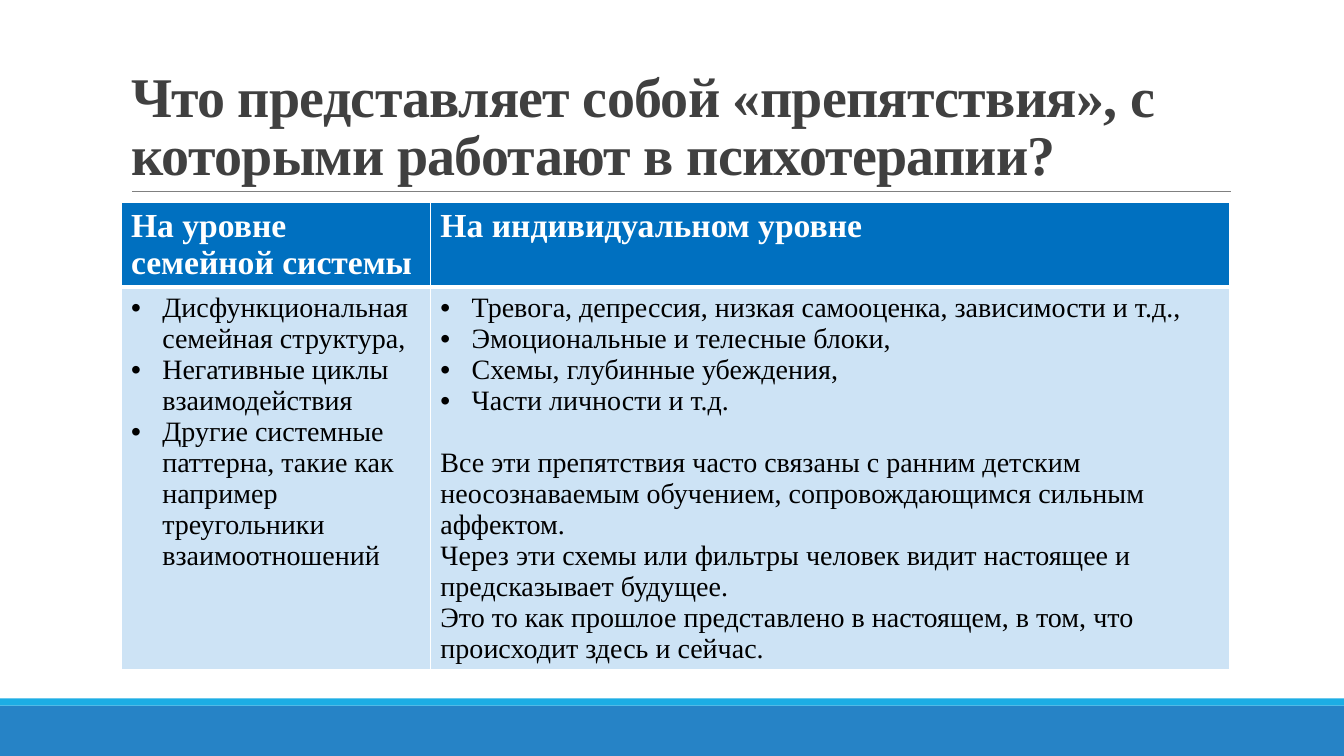
import dataclasses

import lxml.etree
import pptx
import pptx.dml.color
import pptx.enum.shapes
import pptx.enum.text
import pptx.oxml.ns
import pptx.util

SLIDE_WIDTH = pptx.util.Inches(13.33)
SLIDE_HEIGHT = pptx.util.Inches(7.5)
GRID_COLUMNS = 40
GRID_ROWS = 30


@dataclasses.dataclass(frozen=True)
class Theme:
    font: str = "Times New Roman"
    title_color: str = "404040"
    rule_color: str = "808080"
    band_color: str = "2683C6"
    stripe_color: str = "1CADE4"
    header_fill: str = "0070C0"
    body_fill: str = "CDE3F5"
    header_text: str = "FFFFFF"
    body_text: str = "000000"
    border: str = "FFFFFF"
    title_size: int = 40
    header_size: int = 24
    body_size: int = 20
    paragraph_gap: int = 22


THEME = Theme()

TITLE = "Что представляет собой «препятствия», с которыми работают в психотерапии?"
HEADERS = ["На уровне семейной системы", "На индивидуальном уровне"]
FAMILY_BULLETS = [
    "Дисфункциональная семейная структура,",
    "Негативные циклы взаимодействия",
    "Другие системные паттерна, такие как например треугольники взаимоотношений",
]
INDIVIDUAL_BULLETS = [
    "Тревога, депрессия, низкая самооценка, зависимости и т.д.,",
    "Эмоциональные и телесные блоки,",
    "Схемы, глубинные убеждения,",
    "Части личности и т.д.",
]
INDIVIDUAL_NOTES = [
    "Все эти препятствия часто связаны с ранним детским неосознаваемым обучением, "
    "сопровождающимся сильным аффектом.",
    "Через эти схемы или фильтры человек видит настоящее и предсказывает будущее.",
    "Это то как прошлое представлено в настоящем, в том, что происходит здесь и сейчас.",
]


def columns(count):
    return round(SLIDE_WIDTH * count / GRID_COLUMNS)


def rows(count):
    return round(SLIDE_HEIGHT * count / GRID_ROWS)


def rgb(color):
    return pptx.dml.color.RGBColor.from_string(color)


def add_element(parent, tag, **attributes):
    return lxml.etree.SubElement(parent, pptx.oxml.ns.qn(tag), attributes)


def format_runs(paragraph, size, color, bold):
    for run in paragraph.runs:
        run.font.name = THEME.font
        run.font.size = pptx.util.Pt(size)
        run.font.bold = bold
        run.font.color.rgb = rgb(color)


def add_band(slide, top, height, color):
    band = slide.shapes.add_shape(
        pptx.enum.shapes.MSO_SHAPE.RECTANGLE, 0, rows(top), SLIDE_WIDTH, rows(height)
    )
    band.shadow.inherit = False
    band.fill.solid()
    band.fill.fore_color.rgb = rgb(color)
    band.line.fill.background()


def add_rule(slide, left, right, top):
    rule = slide.shapes.add_connector(
        pptx.enum.shapes.MSO_CONNECTOR.STRAIGHT,
        columns(left), rows(top), columns(right), rows(top),
    )
    rule.line.color.rgb = rgb(THEME.rule_color)
    rule.line.width = pptx.util.Pt(0.5)
    add_element(rule._element.spPr, "a:effectLst")


def set_title(slide, left, top, width, height):
    title = slide.shapes.title
    title.left, title.top = columns(left), rows(top)
    title.width, title.height = columns(width), rows(height)
    frame = title.text_frame
    frame.text = TITLE
    frame.word_wrap = True
    frame.auto_size = pptx.enum.text.MSO_AUTO_SIZE.NONE
    frame.vertical_anchor = pptx.enum.text.MSO_ANCHOR.BOTTOM
    paragraph = frame.paragraphs[0]
    paragraph.alignment = pptx.enum.text.PP_ALIGN.LEFT
    paragraph.line_spacing = 0.85
    format_runs(paragraph, THEME.title_size, THEME.title_color, True)
    paragraph.runs[0].font._element.set("spc", "-50")


def style_cell(cell, fill, bottom_width):
    properties = cell._tc.get_or_add_tcPr()
    widths = {"a:lnL": 1, "a:lnR": 1, "a:lnT": 1, "a:lnB": bottom_width}
    for tag, width in widths.items():
        line = add_element(properties, tag, w=str(pptx.util.Pt(width)))
        add_element(add_element(line, "a:solidFill"), "a:srgbClr", val=THEME.border)
    cell.fill.solid()
    cell.fill.fore_color.rgb = rgb(fill)


def add_bullet(paragraph):
    properties = paragraph._p.get_or_add_pPr()
    indent = pptx.util.Inches(0.31)
    properties.set("marL", str(indent))
    properties.set("indent", str(-indent))
    add_element(properties, "a:buFont", typeface="Arial")
    add_element(properties, "a:buChar", char="•")


def fill_header(cell, text):
    style_cell(cell, THEME.header_fill, 3)
    cell.text_frame.text = text
    format_runs(cell.text_frame.paragraphs[0], THEME.header_size, THEME.header_text, True)


def fill_body(cell, bullets, notes):
    style_cell(cell, THEME.body_fill, 1)
    cell.text_frame.text = "\n".join(bullets + notes)
    paragraphs = cell.text_frame.paragraphs
    for paragraph in paragraphs:
        format_runs(paragraph, THEME.body_size, THEME.body_text, False)
    for paragraph in paragraphs[:len(bullets)]:
        add_bullet(paragraph)
    if notes:
        paragraphs[len(bullets)].space_before = pptx.util.Pt(THEME.paragraph_gap)


def add_levels_table(slide, left, top, column_widths, row_heights):
    table = slide.shapes.add_table(
        len(row_heights), len(column_widths), columns(left), rows(top),
        columns(sum(column_widths)), rows(sum(row_heights)),
    ).table
    for column, width in zip(table.columns, column_widths):
        column.width = columns(width)
    for row, height in zip(table.rows, row_heights):
        row.height = rows(height)
    for index, header in enumerate(HEADERS):
        fill_header(table.cell(0, index), header)
    fill_body(table.cell(1, 0), FAMILY_BULLETS, [])
    fill_body(table.cell(1, 1), INDIVIDUAL_BULLETS, INDIVIDUAL_NOTES)


def main():
    presentation = pptx.Presentation()
    presentation.slide_width = SLIDE_WIDTH
    presentation.slide_height = SLIDE_HEIGHT
    slide = presentation.slides.add_slide(presentation.slide_layouts[5])
    add_band(slide, 28, 2, THEME.band_color)
    add_band(slide, 27.72, 0.28, THEME.stripe_color)
    add_rule(slide, 3.93, 36.63, 7.6)
    set_title(slide, 3.6, 1.24, 33, 6.36)
    add_levels_table(slide, 3.6, 8.04, [9.21, 23.79], [3.32, 15.16])
    presentation.save("out.pptx")


if __name__ == "__main__":
    main()
